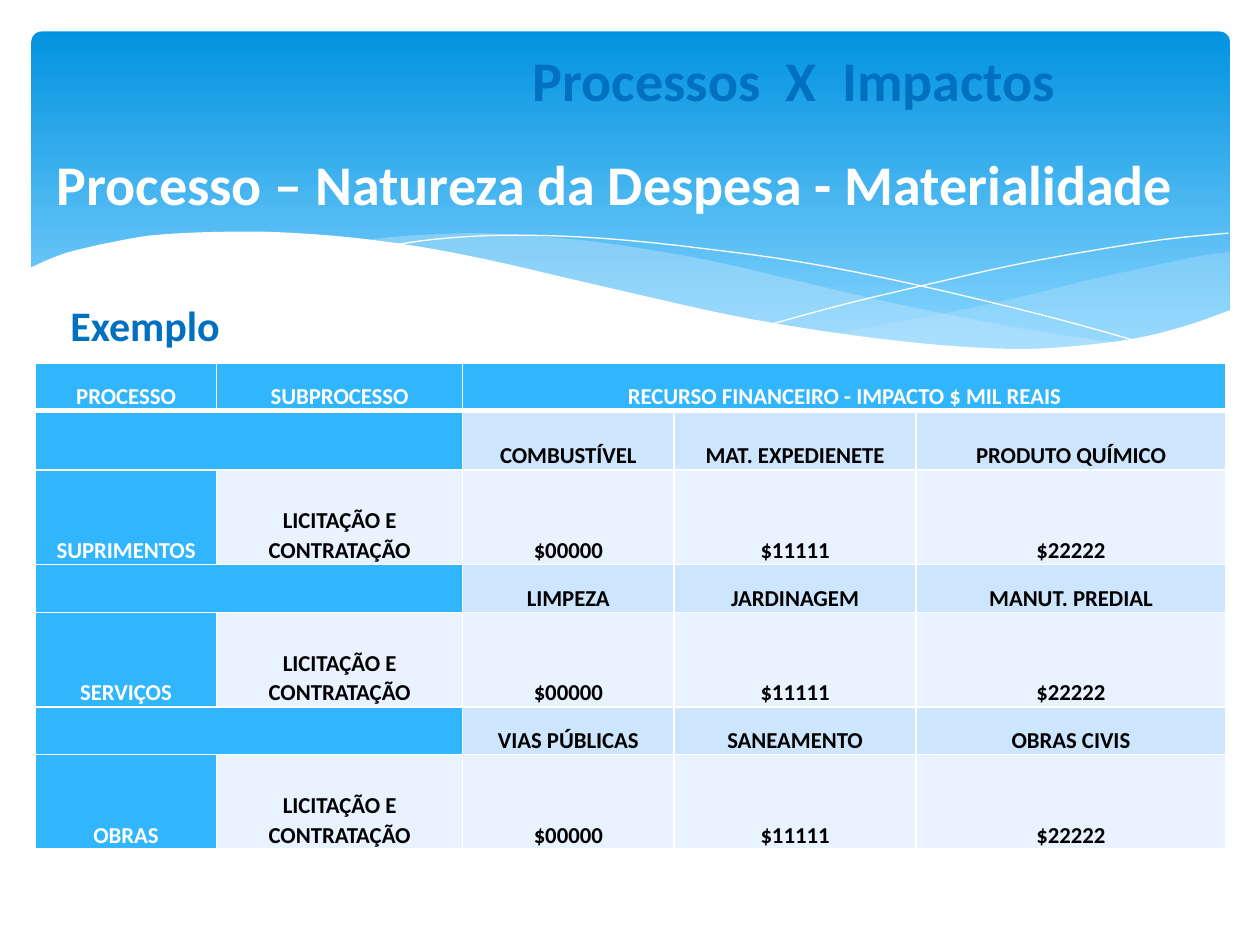
"""Build the slide relating processes, expense nature and materiality."""
from lxml.etree import SubElement
from pptx import Presentation
from pptx.dml.color import RGBColor as RGB
from pptx.enum.shapes import MSO_SHAPE as SHAPE
from pptx.enum.text import MSO_ANCHOR as ANCHOR, PP_ALIGN as ALIGN
from pptx.oxml.ns import qn
from pptx.util import Inches, Pt

THEME = {
    "font": "Calibri", "title": 32, "label": 24, "cell": 13,
    "white": "FFFFFF", "black": "000000", "blue": "0070C0",
    "sky_top": "0293E0", "sky_end": "83D3FE", "wave": "C6E7FC",
    "head": "31B6FD", "band": "CEE5FE", "value": "E8F3FF",
}

prs = Presentation()
prs.slide_width, prs.slide_height = Inches(10), Inches(7.5)
col, row = prs.slide_width / 100, prs.slide_height / 75
s = prs.slides.add_slide(prs.slide_layouts[6])


def write(p, text, size, color):
    r = p.add_run()
    r.text = text
    r.font.name, r.font.size, r.font.bold = THEME["font"], Pt(THEME[size]), True
    r.font.color.rgb = RGB.from_string(THEME[color])


def draw_wave(edges, closed):
    points = []
    for edge in edges:
        knots = [edge[0], *edge, edge[-1]]
        for a, b, c, d in zip(knots, knots[1:], knots[2:], knots[3:]):
            for t in (0, 0.25, 0.5, 0.75):
                points.append(tuple(
                    (2 * q + (r - p) * t + (2 * p - 5 * q + 4 * r - u) * t ** 2
                     + (3 * q - p - 3 * r + u) * t ** 3) / 2
                    for p, q, r, u in zip(a, b, c, d)))
        points.append(edge[-1])
    points = [(round(x * col), round(y * row)) for x, y in points]
    builder = s.shapes.build_freeform(*points[0])
    builder.add_line_segments(points[1:], close=closed)
    sp = builder.convert_to_shape()
    sp.shadow.inherit = False
    return sp


sp = s.shapes.add_shape(SHAPE.ROUNDED_RECTANGLE, int(2.5 * col), int(2.5 * row),
                        int(95.1 * col), int(27 * row))
sp.adjustments[0] = 0.03
sp.shadow.inherit = False
sp.line.fill.background()
sp.fill.gradient()
sp.fill.gradient_angle = 270
for stop, color, position in zip(sp.fill.gradient_stops, ("sky_top", "sky_end"), (0, 0.9)):
    stop.color.rgb = RGB.from_string(THEME[color])
    stop.position = position

right_wave = [
    [(97.6, 20), (94.8, 20.4), (90.6, 21.3), (86.1, 22.3), (80.5, 23.7),
     (75.3, 24.8), (70.6, 25.7), (66.1, 26.5)],
    [(66.1, 26.5), (70.5, 27.1), (75.7, 27.6), (80.3, 27.8), (84.4, 27.7),
     (88.1, 27.3), (91.3, 26.7), (94.2, 25.9), (97.6, 24.7)],
]
middle_wave = [
    [(89.3, 27.3), (83.7, 26.5), (77.5, 25.4), (70.6, 24), (62.9, 22.2),
     (56.9, 20.8), (51.4, 19.8), (46.5, 19.1), (42, 18.7), (38, 18.5),
     (34.4, 18.6), (31.3, 18.8), (28.6, 19.1)],
    [(28.6, 19.1), (34.2, 19.9), (40.4, 21.1), (44.9, 22.2), (53, 24),
     (60.1, 25.5), (66.5, 26.6), (72.2, 27.4), (77.3, 27.7), (81.8, 27.8),
     (85.7, 27.7), (89.3, 27.3)],
]
falling_line = [(30.9, 19.5), (34.4, 19), (38.7, 18.7), (43.3, 18.7), (48.9, 19),
                (55.6, 19.7), (63.6, 20.8), (72.7, 22.6), (83.1, 25.1), (90.7, 27.2)]
rising_line = [(61.3, 25.7), (67.2, 24.1), (74.8, 22.3), (80.6, 21),
               (86.6, 19.9), (92.4, 19), (97.5, 18.5)]
white_wave = [
    [(97.7, 24.6), (94, 25.9), (89.9, 26.9), (85, 27.5), (80.9, 27.7),
     (76.1, 27.5), (70.8, 27), (64.8, 26.2), (57.9, 25), (50.3, 23.3),
     (44.7, 22), (39.1, 20.7), (34, 19.7), (29.2, 19), (25, 18.6),
     (21.1, 18.4), (17.7, 18.4), (14.6, 18.5), (11.9, 18.7), (9.5, 19.1),
     (6.7, 19.7), (4.6, 20.3), (2.3, 21.3)],
    [(2.3, 32.9), (97.7, 32.9)],
]

for edges, color, opacity in ((right_wave, "wave", 29), (middle_wave, "wave", 40)):
    sp = draw_wave(edges, True)
    sp.line.fill.background()
    sp.fill.solid()
    sp.fill.fore_color.rgb = RGB.from_string(THEME[color])
    tone = sp.fill._xPr.find(qn("a:solidFill"))[0]
    SubElement(tone, qn("a:alpha"), val=str(opacity * 1000))

for edge in (falling_line, rising_line):
    sp = draw_wave([edge], False)
    sp.fill.background()
    sp.line.color.rgb = RGB.from_string(THEME["white"])
    sp.line.width = Pt(0)

sp = draw_wave(white_wave, True)
sp.line.fill.background()
sp.fill.solid()
sp.fill.fore_color.rgb = RGB.from_string(THEME["white"])

widths = [14.4, 19.5, 16.8, 19.2, 24.6]
heights = [3.8, 4.7, 7.5, 3.8, 7.5, 3.8, 7.5]
rows = [["PROCESSO", "SUBPROCESSO", "RECURSO FINANCEIRO - IMPACTO $ MIL REAIS", "", ""]]
for process, kinds in (
    ("SUPRIMENTOS", ["COMBUSTÍVEL", "MAT. EXPEDIENETE", "PRODUTO QUÍMICO"]),
    ("SERVIÇOS", ["LIMPEZA", "JARDINAGEM", "MANUT. PREDIAL"]),
    ("OBRAS", ["VIAS PÚBLICAS", "SANEAMENTO", "OBRAS CIVIS"]),
):
    rows.append(["", "", *kinds])
    rows.append([process, "LICITAÇÃO E CONTRATAÇÃO", "$00000", "$11111", "$22222"])

table = s.shapes.add_table(len(rows), len(widths), int(2.8 * col), int(28.8 * row),
                           int(sum(widths) * col), int(sum(heights) * row)).table
table.first_row = table.horz_banding = False
for column, width in zip(table.columns, widths):
    column.width = int(width * col)
for line, height in zip(table.rows, heights):
    line.height = int(height * row)

for i, texts in enumerate(rows):
    for j, text in enumerate(texts):
        cell = table.cell(i, j)
        is_band = i % 2 == 1
        is_head = i == 0 or j == 0 or (is_band and j == 1)
        cell.margin_left = cell.margin_right = int(0.4 * col)
        cell.margin_top = cell.margin_bottom = 0
        cell.vertical_anchor = ANCHOR.BOTTOM
        for side in "LRTB":
            thick = (i, side) in ((0, "B"), (1, "T"))
            border = SubElement(cell._tc.get_or_add_tcPr(), qn(f"a:ln{side}"),
                                w=str(Pt(3 if thick else 1)))
            SubElement(SubElement(border, qn("a:solidFill")), qn("a:srgbClr"),
                       val=THEME["white"])
        cell.fill.solid()
        shade = "head" if is_head else "band" if is_band else "value"
        cell.fill.fore_color.rgb = RGB.from_string(THEME[shade])
        if text:
            p = cell.text_frame.paragraphs[0]
            p.alignment = ALIGN.CENTER
            p.line_spacing = 1.5 if (i, j) == (2, 2) else 1.07
            write(p, text, "cell", "white" if is_head else "black")

table.cell(0, 2).merge(table.cell(0, 4))
for i in range(1, len(rows), 2):
    table.cell(i, 0).merge(table.cell(i, 1))

for text, size, color, x, y, width, height in (
    ("Processos  X  Impactos", "title", "blue", 41.3, 3.1, 60.2, 6.4),
    ("Processo – Natureza da Despesa - Materialidade", "title", "white", 3.5, 11.4, 94.5, 6.4),
    ("Exemplo", "label", "blue", 4.6, 23.3, 14.7, 5),
):
    tf = s.shapes.add_textbox(int(x * col), int(y * row), int(width * col),
                              int(height * row)).text_frame
    tf.word_wrap = True
    write(tf.paragraphs[0], text, size, color)

prs.save("out.pptx")
